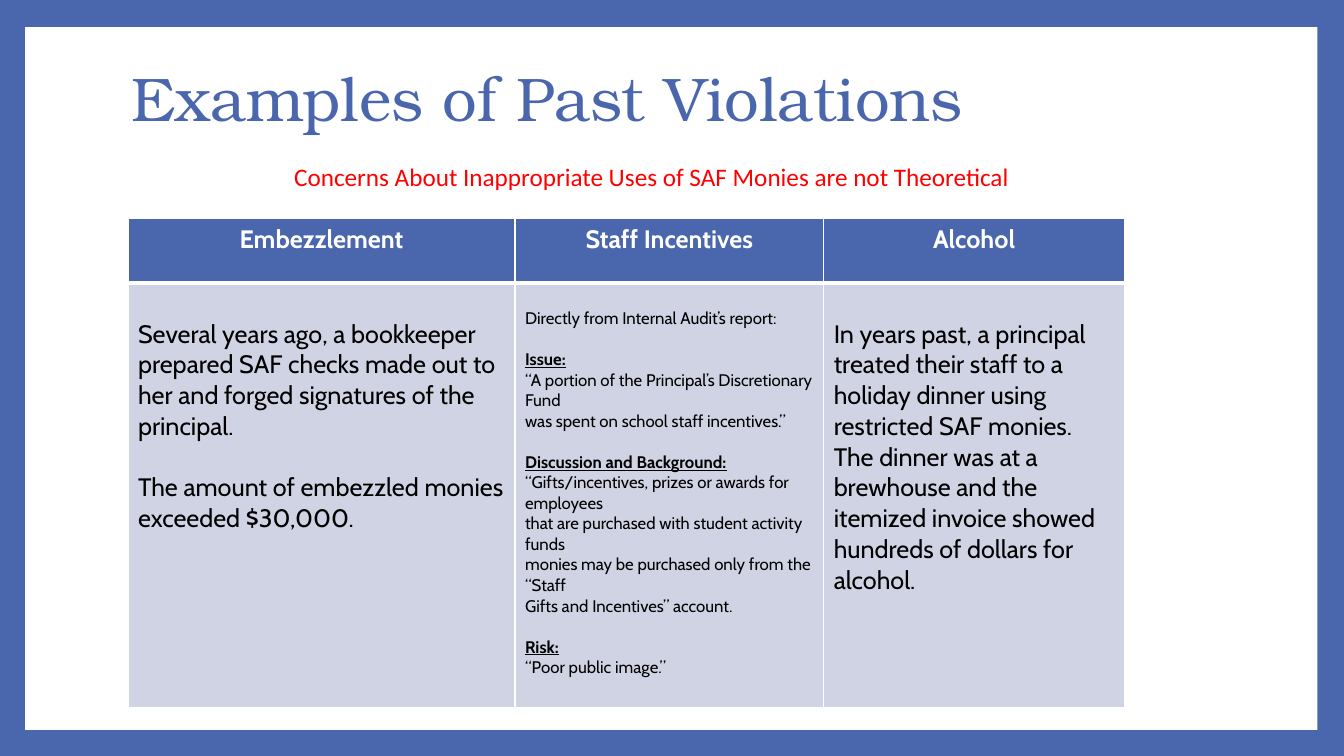
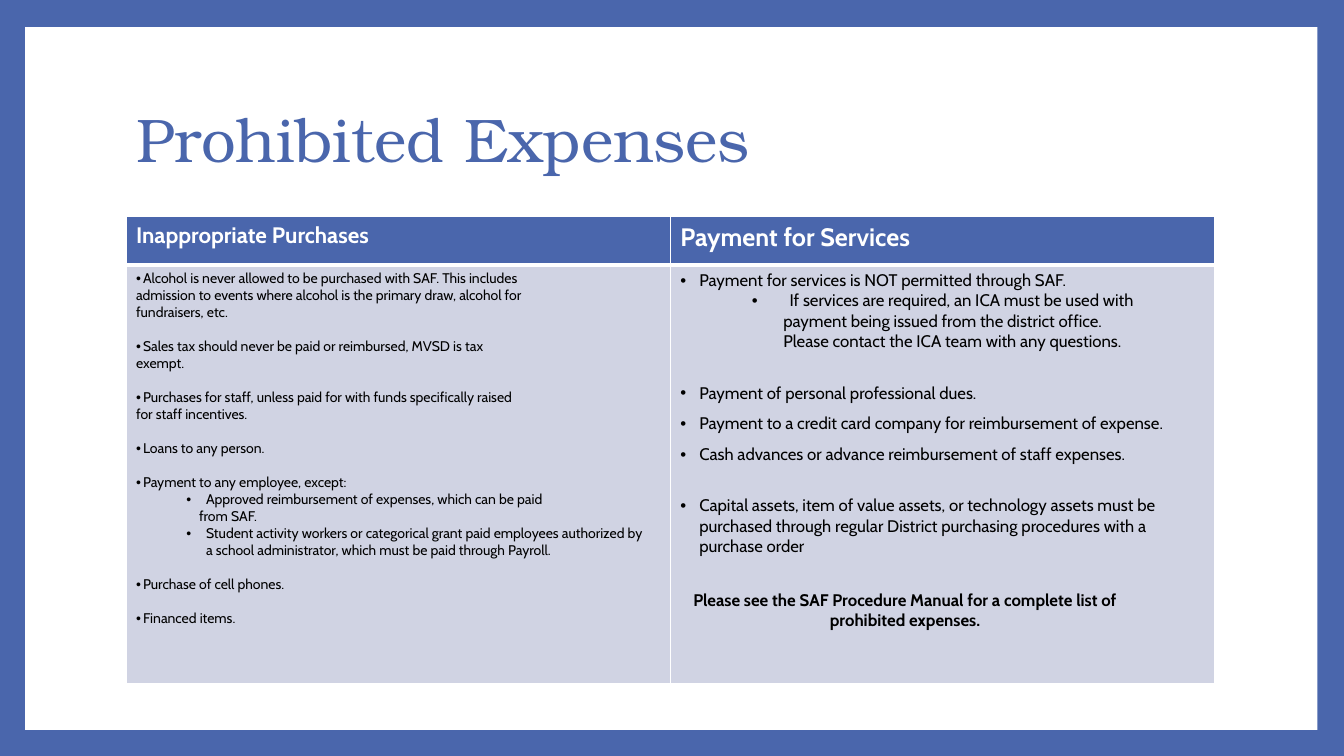
"""Build two slides on past violations and prohibited expenses of student activity funds."""
from dataclasses import dataclass, replace
from functools import partial

from lxml.etree import SubElement
from pptx import Presentation
from pptx.dml.color import RGBColor as RGB
from pptx.enum.shapes import MSO_SHAPE as SHAPE
from pptx.enum.text import MSO_ANCHOR as ANCHOR, MSO_AUTO_SIZE as FIT, PP_ALIGN as ALIGN
from pptx.oxml.ns import qn
from pptx.util import Pt


@dataclass(frozen=True)
class Theme:
    blue: RGB = RGB.from_string("4A66AC")
    pale: RGB = RGB.from_string("D0D3E3")
    white: RGB = RGB.from_string("FFFFFF")
    black: RGB = RGB.from_string("000000")
    red: RGB = RGB.from_string("FF0000")
    title_font: str = "TeX Gyre Bonum"
    body_font: str = "Cabin"
    note_font: str = "Calibri"
    title: int = 44
    large: int = 18
    medium: int = 16
    small: int = 12
    tiny: int = 10
    line_height: float = 1.22
    cell_pad: float = 3.6
    thin_border: int = 1
    header_border: int = 3


THEME = Theme()


@dataclass(frozen=True)
class Para:
    text: str
    size: int = THEME.large
    color: RGB = THEME.black
    font: str = THEME.body_font
    bold: bool = False
    underline: bool = False
    align: ALIGN = ALIGN.LEFT
    gap_lines: float = 0
    spacing: float = 1.0
    left: float = 0
    hang: float = 0

    @property
    def gap(self):
        return self.gap_lines * self.size * THEME.line_height


def write(frame, paragraphs):
    for index, para in enumerate(paragraphs):
        line = frame.add_paragraph() if index else frame.paragraphs[0]
        line.alignment = para.align
        line.line_spacing = para.spacing
        line.space_before = Pt(para.gap if index else 0)
        run = line.add_run()
        run.text = para.text
        run.font.name = para.font
        run.font.size = Pt(para.size)
        run.font.bold = para.bold
        run.font.underline = para.underline
        run.font.color.rgb = para.color
        props = line._p.get_or_add_pPr()
        props.set("marL", str(Pt(para.left)))
        props.set("indent", str(Pt(-para.hang)))
        if para.hang:
            SubElement(props, qn("a:buFont"), typeface="Arial")
            SubElement(props, qn("a:buChar"), char="•")


def paint_cell(cell, fill, top, bottom):
    props = cell._tc.get_or_add_tcPr()
    edges = {"L": THEME.thin_border, "R": THEME.thin_border, "T": top, "B": bottom}
    for side, width in edges.items():
        border = SubElement(props, qn(f"a:ln{side}"), w=str(Pt(width)))
        solid = SubElement(border, qn("a:solidFill"))
        SubElement(solid, qn("a:srgbClr"), val=str(THEME.white))
    cell.fill.solid()
    cell.fill.fore_color.rgb = fill


heading = partial(Para, color=THEME.white, bold=True)
centered_heading = partial(heading, align=ALIGN.CENTER)
report = partial(Para, size=THEME.small)
report_heading = partial(report, bold=True, underline=True, gap_lines=1)
purchase = partial(Para, size=THEME.tiny)
purchase_item = partial(purchase, gap_lines=1, left=5, hang=5)
exception = partial(purchase, left=50, hang=14)
service = partial(Para, size=THEME.small)
service_item = partial(service, left=13.5, hang=13.5)
spaced_item = partial(service_item, spacing=1.5)
manual_note = partial(service, bold=True, align=ALIGN.CENTER)

embezzlement = [
    Para("Several years ago, a bookkeeper prepared SAF checks made out to her "
         "and forged signatures of the principal.", gap_lines=1),
    Para("The amount of embezzled monies exceeded $30,000.", gap_lines=1),
]
staff_incentives = [
    report("Directly from Internal Audit’s report:", gap_lines=1),
    report_heading("Issue:"),
    report("“A portion of the Principal’s Discretionary Fund"),
    report("was spent on school staff incentives.”"),
    report_heading("Discussion and Background:"),
    report("“Gifts/incentives, prizes or awards for employees"),
    report("that are purchased with student activity funds"),
    report("monies may be purchased only from the “Staff"),
    report("Gifts and Incentives” account."),
    report_heading("Risk:"),
    report("“Poor public image.”"),
]
alcohol = [
    Para("In years past, a principal treated their staff to a", gap_lines=1),
    Para("holiday dinner using restricted SAF monies."),
    Para("The dinner was at a brewhouse and the"),
    Para("itemized invoice showed hundreds of dollars for alcohol."),
]
inappropriate_purchases = [
    purchase_item("Alcohol is never allowed to be purchased with SAF. This includes",
                  gap_lines=0),
    purchase("admission to events where alcohol is the primary draw, alcohol for"),
    purchase("fundraisers, etc."),
    purchase_item("Sales tax should never be paid or reimbursed, MVSD is tax"),
    purchase("exempt."),
    purchase_item("Purchases for staff, unless paid for with funds specifically raised"),
    purchase("for staff incentives."),
    purchase_item("Loans to any person."),
    purchase_item("Payment to any employee, except:"),
    exception("Approved reimbursement of expenses, which can be paid"),
    purchase("from SAF.", left=45),
    exception("Student activity workers or categorical grant paid employees authorized by"),
    purchase("a school administrator, which must be paid through Payroll.", left=50),
    purchase_item("Purchase of cell phones."),
    purchase_item("Financed items."),
]
payment_for_services = [
    service_item("Payment for services is NOT permitted through SAF."),
    service("If services are required, an ICA must be used with", left=78, hang=27),
    service("payment being issued from the district office.", left=73.5),
    service("Please contact the ICA team with any questions.", left=73.5),
    spaced_item("Payment of personal professional dues.", gap_lines=1),
    spaced_item("Payment to a credit card company for reimbursement of expense."),
    spaced_item("Cash advances or advance reimbursement of staff expenses."),
    service_item("Capital assets, item of value assets, or technology assets must be "
                 "purchased through regular District purchasing procedures with a "
                 "purchase order", gap_lines=1.5),
]

pages = [
    {
        "title": "Examples of Past Violations",
        "title_at": (86.4, 19.4),
        "table_at": (91.4, 156.2),
        "widths": (276.5, 220.5, 215),
        "heights": (46, 303),
        "headings": [centered_heading(text)
                     for text in ("Embezzlement", "Staff Incentives", "Alcohol")],
        "bodies": [embezzlement, staff_incentives, alcohol],
        "note_at": (203, 111.6, 531, 29),
        "note_pad": 7.2,
        "note": [Para("Concerns About Inappropriate Uses of SAF Monies are not Theoretical",
                      color=THEME.red, font=THEME.note_font)],
    },
    {
        "title": "Prohibited Expenses",
        "title_at": (90, 48.2),
        "table_at": (90, 154.8),
        "widths": (388.8, 388.8),
        "heights": (34.5, 299),
        "headings": [heading("Inappropriate Purchases", size=THEME.medium),
                     heading("Payment for Services")],
        "bodies": [inappropriate_purchases, payment_for_services],
        "note_at": (488, 417.6, 317, 36),
        "note_pad": 0,
        "note": [manual_note("Please see the SAF Procedure Manual for a complete list of"),
                 manual_note("prohibited expenses.")],
    },
]

deck = Presentation()
deck.slide_width, deck.slide_height = Pt(960), Pt(540)
master = deck.slide_master
master.background.fill.solid()
master.background.fill.fore_color.rgb = THEME.blue
title_only = deck.slide_layouts[5]
slides = [deck.slides.add_slide(title_only) for page in pages]

panel = slides[0].shapes.add_shape(SHAPE.RECTANGLE, Pt(18), Pt(19.4), Pt(923), Pt(502))
panel.shadow.inherit = False
panel.fill.solid()
panel.fill.fore_color.rgb = THEME.white
panel.line.fill.background()
panel.element.xpath(".//p:cNvPr")[0].set("id", "20")
master.shapes.element.insert(2, panel.element)

for slide, page in zip(slides, pages):
    title = slide.shapes.title
    title.left, title.top = map(Pt, page["title_at"])
    title.width, title.height = Pt(777.6), Pt(106.6)
    title.text_frame.vertical_anchor = ANCHOR.MIDDLE
    title.text_frame.auto_size = FIT.NONE
    write(title.text_frame, [Para(page["title"], size=THEME.title, color=THEME.blue,
                                  font=THEME.title_font, spacing=0.9)])

    widths, heights = page["widths"], page["heights"]
    table = slide.shapes.add_table(len(heights), len(widths), *map(Pt, page["table_at"]),
                                   Pt(sum(widths)), Pt(sum(heights))).table
    for row, height in zip(table.rows, heights):
        row.height = Pt(height)
    for column, width in enumerate(widths):
        table.columns[column].width = Pt(width)
        header, body = table.cell(0, column), table.cell(1, column)
        paint_cell(header, THEME.blue, THEME.thin_border, THEME.header_border)
        paint_cell(body, THEME.pale, THEME.header_border, THEME.thin_border)
        paragraphs = page["bodies"][column]
        body.margin_top = Pt(THEME.cell_pad + paragraphs[0].gap)
        write(header.text_frame, [page["headings"][column]])
        write(body.text_frame, [replace(paragraphs[0], gap_lines=0), *paragraphs[1:]])

    note = slide.shapes.add_textbox(*map(Pt, page["note_at"])).text_frame
    note.word_wrap = True
    note.margin_left = note.margin_right = Pt(page["note_pad"])
    write(note, page["note"])

deck.save("out.pptx")
